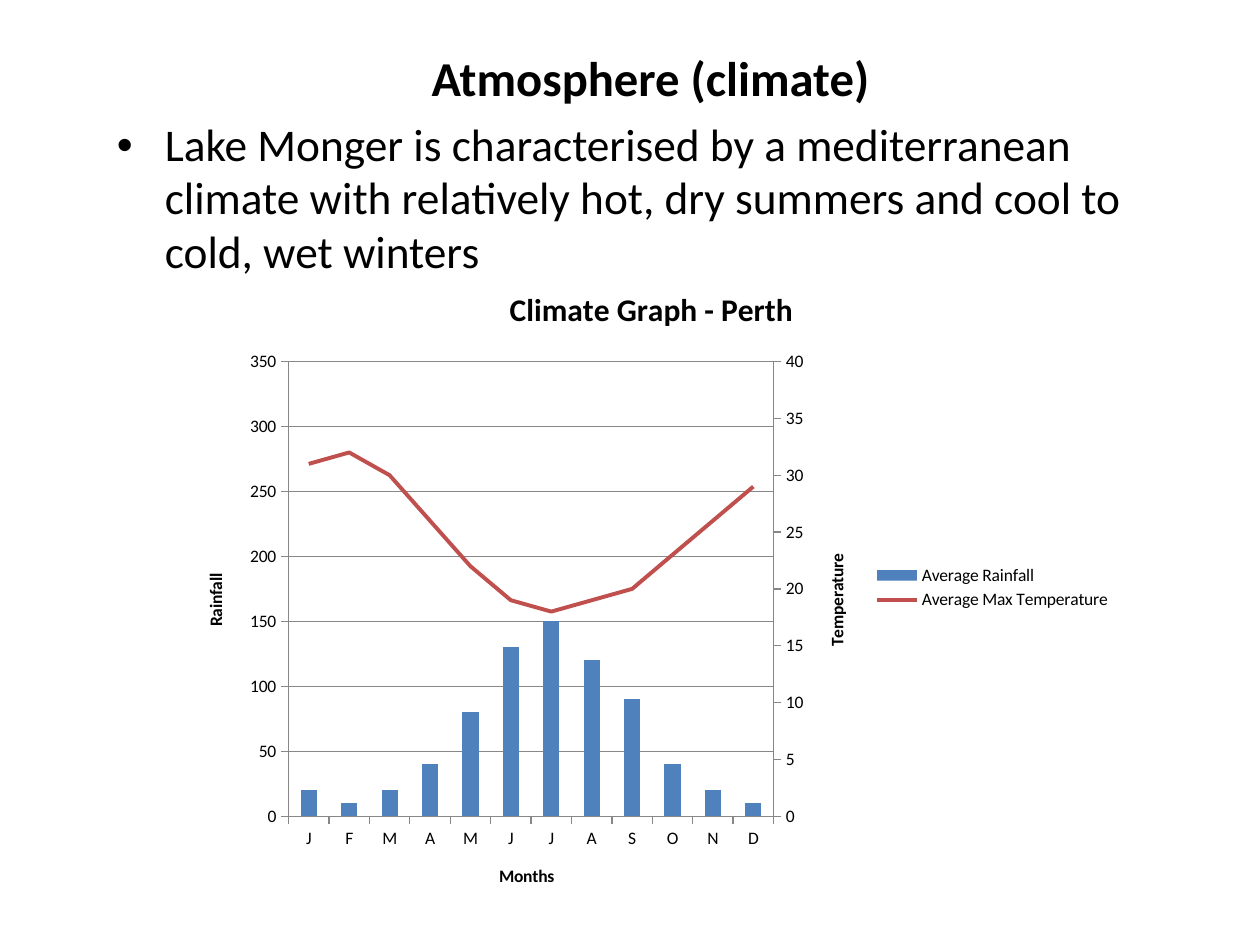
from copy import deepcopy

from lxml.etree import SubElement
from pptx import Presentation
from pptx.chart.axis import ValueAxis
from pptx.chart.data import CategoryChartData
from pptx.dml.color import RGBColor
from pptx.enum.chart import XL_CHART_TYPE, XL_LEGEND_POSITION, XL_MARKER_STYLE, XL_TICK_MARK
from pptx.enum.text import PP_ALIGN
from pptx.oxml import parse_xml
from pptx.oxml.ns import nsdecls, qn
from pptx.util import Inches, Pt

COLORS = {"text": "000000", "rain": "4F81BD", "temperature": "C0504D", "axis": "878787"}
FONT = "Calibri"


def style_font(font, size, bold=False):
    font.name, font.size, font.bold = FONT, Pt(size), bold
    font.color.rgb = RGBColor.from_string(COLORS["text"])


def add_title_text(title, text, size):
    span = title.text_frame.paragraphs[0].add_run()
    span.text = text
    style_font(span.font, size, bold=True)


deck = Presentation()
deck.slide_width, deck.slide_height = Inches(10), Inches(7.5)
page = deck.slides.add_slide(deck.slide_layouts[6])

# Heading and bullet
box = page.shapes.add_textbox(Inches(0.83), Inches(0.33), Inches(8.67), Inches(1.83))
frame = box.text_frame
frame.word_wrap = True
frame.margin_top = Inches(0.07)
lines = [
    ("Atmosphere (climate)", 27.8, True),
    ("Lake Monger is characterised by a mediterranean climate with relatively hot, "
     "dry summers and cool to cold, wet winters", 25.9, False),
]
for index, (text, size, is_heading) in enumerate(lines):
    para = frame.paragraphs[0] if index == 0 else frame.add_paragraph()
    para.line_spacing = 0.99
    properties = para._p.get_or_add_pPr()
    properties.set("marL", str(Inches(0.38)))
    properties.set("indent", str(-Inches(0.38)))
    if is_heading:
        para.alignment = PP_ALIGN.CENTER
    else:
        para.space_before = Pt(5.6)
        SubElement(properties, qn("a:buFont"), typeface="Arial")
        SubElement(properties, qn("a:buChar"), char="•")
    span = para.add_run()
    span.text = text
    style_font(span.font, size, is_heading)

# Climate chart
chart_width, chart_height = Inches(7.5), Inches(5.17)
data = CategoryChartData()
data.categories = list("JFMAMJJASOND")
data.add_series("Average Rainfall", [20, 10, 20, 40, 80, 130, 150, 120, 90, 40, 20, 10])
data.add_series("Average Max Temperature", [31, 32, 30, 26, 22, 19, 18, 19, 20, 23, 26, 29])
chart = page.shapes.add_chart(
    XL_CHART_TYPE.COLUMN_CLUSTERED, Inches(1.42), Inches(2.08), chart_width, chart_height, data
).chart
style_font(chart.font, 10)
chart.has_title = True
add_title_text(chart.chart_title, "Climate Graph - Perth", 18)
chart.has_legend = True
chart.legend.position = XL_LEGEND_POSITION.RIGHT
chart.legend.include_in_layout = False

bars = chart.plots[0]
bars.gap_width = 150
bars.vary_by_categories = False
rain, temperature = bars.series
rain.format.fill.solid()
rain.format.fill.fore_color.rgb = RGBColor.from_string(COLORS["rain"])

# Temperature becomes a line on a second pair of axes
plot_area = chart._chartSpace.chart.plotArea
line_element = parse_xml(
    f'<c:lineChart {nsdecls("c")}><c:grouping val="standard"/><c:varyColors val="0"/>'
    '<c:marker val="1"/><c:axId val="5001"/><c:axId val="5002"/></c:lineChart>'
)
temperature_element = temperature._element
for child in temperature_element.findall(qn("c:invertIfNegative")):
    temperature_element.remove(child)
line_element.insert(2, temperature_element)
plot_area.find(qn("c:barChart")).addnext(line_element)

category_element = plot_area.find(qn("c:catAx"))
left_element = plot_area.find(qn("c:valAx"))
right_element = deepcopy(left_element)
hidden_element = deepcopy(category_element)
left_element.addnext(right_element)
right_element.addnext(hidden_element)
for element, own_id, cross_id, crosses in (
    (right_element, "5002", "5001", "max"),
    (hidden_element, "5001", "5002", "autoZero"),
):
    element.find(qn("c:axId")).set("val", own_id)
    element.find(qn("c:crossAx")).set("val", cross_id)
    element.find(qn("c:crosses")).set("val", crosses)
right_element.find(qn("c:axPos")).set("val", "r")
hidden_element.find(qn("c:delete")).set("val", "1")

line_series = chart.plots[1].series[0]
line_series.smooth = False
line_series.marker.style = XL_MARKER_STYLE.NONE
line_series.format.line.width = Pt(2.25)
line_series.format.line.color.rgb = RGBColor.from_string(COLORS["temperature"])

# Axes
left_axis, right_axis = ValueAxis(left_element), ValueAxis(right_element)
for axis, title, top, step in (
    (chart.category_axis, "Months", None, None),
    (left_axis, "Rainfall", 350, 50),
    (right_axis, "Temperature", 40, 5),
):
    add_title_text(axis.axis_title, title, 10)
    axis.major_tick_mark = XL_TICK_MARK.OUTSIDE
    axis.minor_tick_mark = XL_TICK_MARK.NONE
    style_font(axis.tick_labels.font, 10)
    axis.format.line.width = Pt(0.75)
    axis.format.line.color.rgb = RGBColor.from_string(COLORS["axis"])
    axis.has_major_gridlines = axis is left_axis
    if top:
        axis.minimum_scale, axis.maximum_scale, axis.major_unit = 0, top, step
        body = axis.axis_title.text_frame._txBody.bodyPr
        body.set("rot", "-5400000")
        body.set("vert", "horz")
grid_line = left_axis.major_gridlines.format.line
grid_line.width = Pt(0.75)
grid_line.color.rgb = RGBColor.from_string(COLORS["axis"])

# Plot position as shares of the chart
for child in plot_area.findall(qn("c:layout")):
    plot_area.remove(child)
layout = SubElement(plot_area, qn("c:layout"))
plot_area.insert(0, layout)
manual = SubElement(layout, qn("c:manualLayout"))
for tag, value in (
    ("layoutTarget", "inner"), ("xMode", "edge"), ("yMode", "edge"),
    ("x", Inches(0.87) / chart_width), ("y", Inches(0.79) / chart_height),
    ("w", Inches(3.85) / chart_width), ("h", Inches(3.61) / chart_height),
):
    SubElement(manual, qn(f"c:{tag}"), val=str(value))

deck.save("out.pptx")
